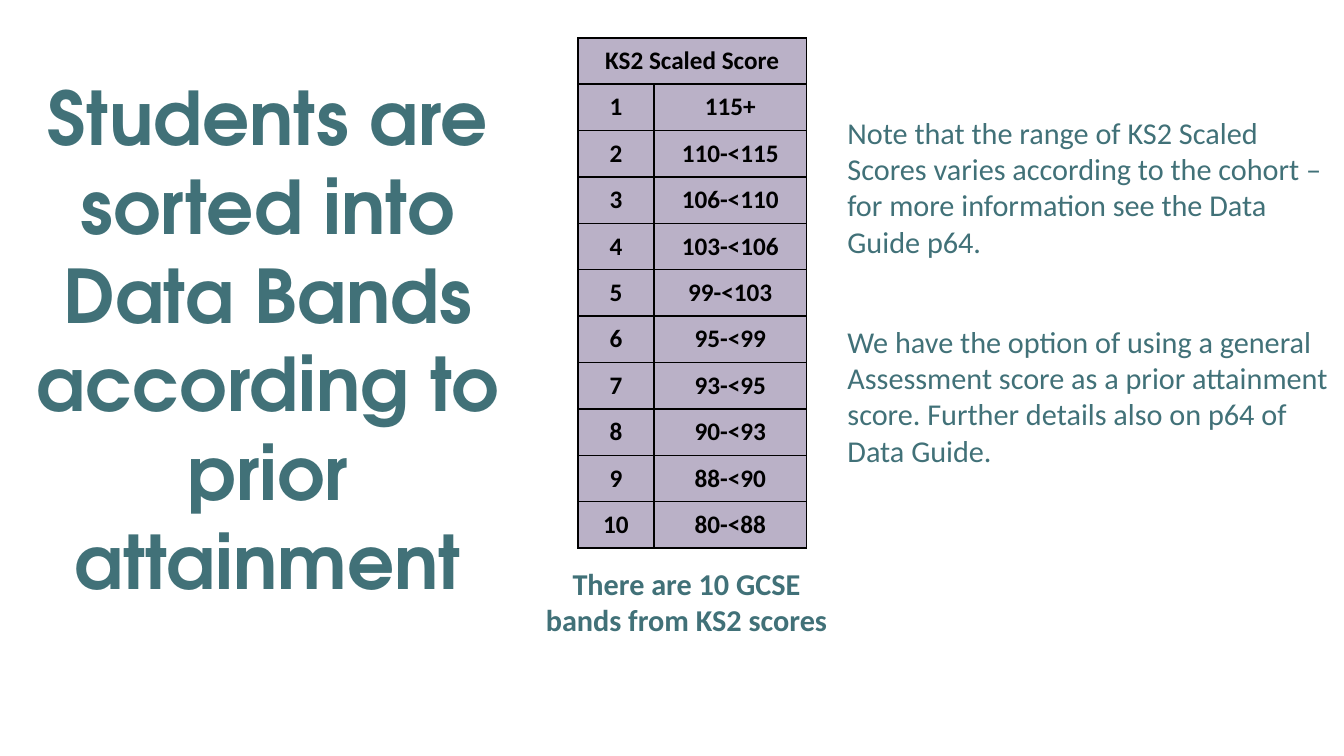
from lxml.etree import SubElement
from pptx import Presentation
from pptx.dml.color import RGBColor
from pptx.enum.text import MSO_ANCHOR, PP_ALIGN
from pptx.oxml.ns import qn
from pptx.util import Inches, Pt

TEAL = RGBColor(0x41, 0x71, 0x78)
LILAC = RGBColor(0xBA, 0xB1, 0xC7)
BLACK = RGBColor(0, 0, 0)
WIDTH, HEIGHT = Inches(11.11), Inches(6.25)
BODY_FONT, TITLE_FONT = "Calibri", "TeX Gyre Adventor"

TITLE = "Students are sorted into Data Bands according to prior attainment"
HEADING = "KS2 Scaled Score"
SCORES = ["115+", "110-<115", "106-<110", "103-<106", "99-<103",
          "95-<99", "93-<95", "90-<93", "88-<90", "80-<88"]
CAPTION = "There are 10 GCSE bands from KS2 scores"
NOTES = [
    "Note that the range of KS2 Scaled Scores varies according to the cohort – "
    "for more information see the Data Guide p64.",
    "We have the option of using a general Assessment score as a prior attainment "
    "score. Further details also on p64 of Data Guide.",
]


def share_box(left, top, width, height):
    """Turn shares of the slide's size into lengths."""
    return (int(WIDTH * left), int(HEIGHT * top),
            int(WIDTH * width), int(HEIGHT * height))


def write(paragraph, text, size=18, font=BODY_FONT, color=TEAL, bold=False,
          align=PP_ALIGN.LEFT):
    paragraph.alignment = align
    run = paragraph.add_run()
    run.text = text
    run.font.size = Pt(size)
    run.font.name = font
    run.font.bold = bold
    run.font.color.rgb = color


def add_text(slide, box, texts, inset=None, gap=0, **text_format):
    """Place paragraphs in a box, with a gap in points between them."""
    frame = slide.shapes.add_textbox(*box).text_frame
    frame.word_wrap = True
    if inset is not None:
        frame.margin_left = frame.margin_right = inset
        frame.margin_top = frame.margin_bottom = inset
    for index, text in enumerate(texts):
        paragraph = frame.add_paragraph() if index else frame.paragraphs[0]
        paragraph._p.get_or_add_pPr().set("marL", str(Inches(0.13)))
        if index:
            paragraph.space_before = Pt(gap)
        write(paragraph, text, **text_format)


def add_borders(cell):
    properties = cell._tc.get_or_add_tcPr()
    for position, side in enumerate(("a:lnL", "a:lnR", "a:lnT", "a:lnB")):
        line = SubElement(properties, qn(side), w=str(Pt(1)))
        fill = SubElement(line, qn("a:solidFill"))
        SubElement(fill, qn("a:srgbClr"), val=str(BLACK))
        properties.insert(position, line)


def fill_cell(cell, text):
    cell.fill.solid()
    cell.fill.fore_color.rgb = LILAC
    cell.margin_left = cell.margin_right = Inches(0.13)
    cell.margin_top = cell.margin_bottom = Inches(0.06)
    cell.vertical_anchor = MSO_ANCHOR.MIDDLE
    add_borders(cell)
    if text:
        write(cell.text_frame.paragraphs[0], text, size=15, color=BLACK,
              bold=True, align=PP_ALIGN.CENTER)


def add_score_table(slide, box):
    """Build the band table; the band column takes a third of the width."""
    rows = [(HEADING, "")]
    rows += [(str(band), score) for band, score in enumerate(SCORES, 1)]
    table = slide.shapes.add_table(len(rows), 2, *box).table
    table.first_row = table.horz_banding = False
    table.columns[0].width = box[2] // 3
    table.columns[1].width = box[2] - box[2] // 3
    for row_index, values in enumerate(rows):
        table.rows[row_index].height = box[3] // len(rows)
        for column_index, text in enumerate(values):
            fill_cell(table.cell(row_index, column_index), text)
    table.cell(0, 0).merge(table.cell(0, 1))


def build_bands_slide(presentation):
    slide = presentation.slides.add_slide(presentation.slide_layouts[6])
    add_text(slide, share_box(0.38, 0.74, 0.25, 0.11), [CAPTION],
             bold=True, align=PP_ALIGN.CENTER)
    add_score_table(slide, share_box(0.43, 0.05, 0.17, 0.675))
    add_text(slide, share_box(0.61, 0.143, 0.39, 0.49), NOTES, gap=38)
    add_text(slide, share_box(0, 0.095, 0.387, 0.3), [TITLE], inset=0, size=44,
             font=TITLE_FONT, bold=True, align=PP_ALIGN.CENTER)


def main():
    presentation = Presentation()
    presentation.slide_width, presentation.slide_height = WIDTH, HEIGHT
    build_bands_slide(presentation)
    presentation.save("out.pptx")


if __name__ == "__main__":
    main()
